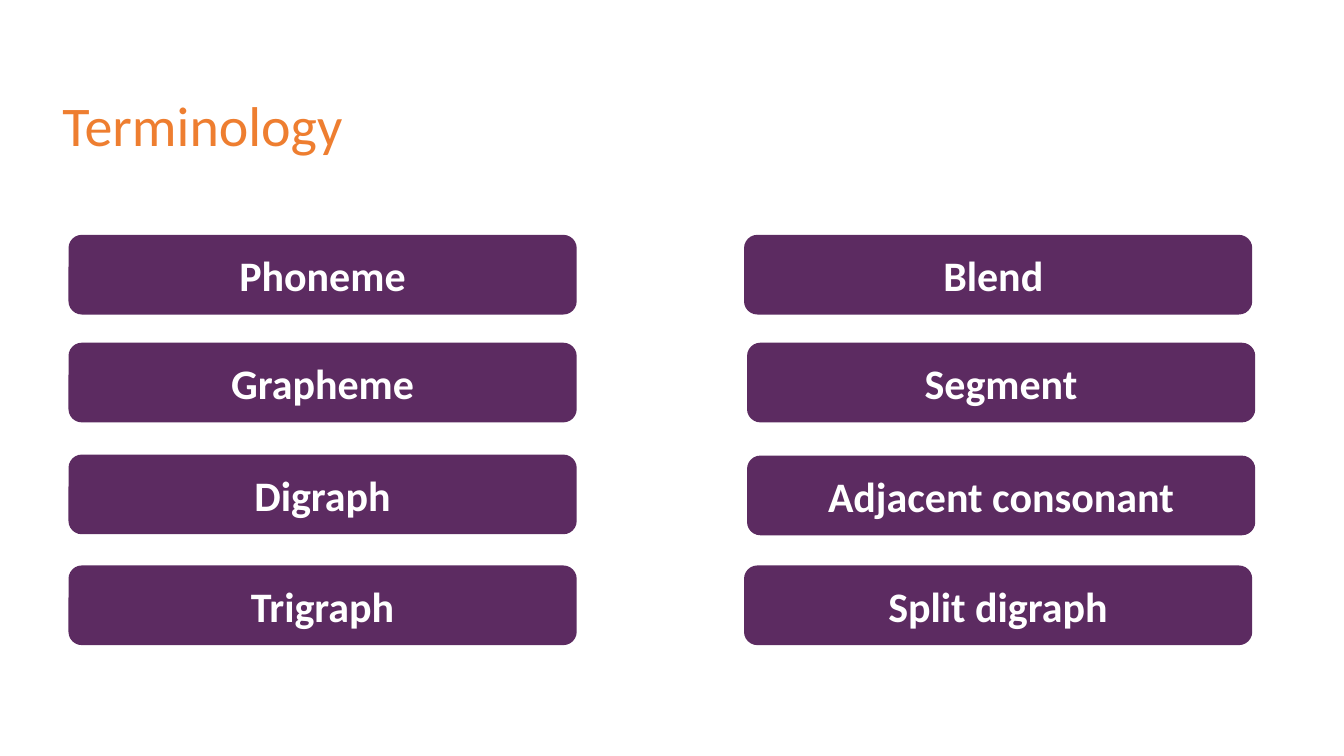
from dataclasses import dataclass

from pptx import Presentation
from pptx.dml.color import RGBColor
from pptx.enum.shapes import MSO_SHAPE
from pptx.enum.text import MSO_ANCHOR, PP_ALIGN
from pptx.util import Inches, Pt

ROUNDED = MSO_SHAPE.ROUNDED_RECTANGLE
LEFT, CENTER = PP_ALIGN.LEFT, PP_ALIGN.CENTER
BOTTOM, MIDDLE = MSO_ANCHOR.BOTTOM, MSO_ANCHOR.MIDDLE

FONT = "Calibri"
ORANGE, PURPLE, WHITE = "EE7E30", "5C2B61", "FFFFFF"
TERM_WIDTH, TERM_HEIGHT = 5.04, 0.79
LEFT_COLUMN, RIGHT_COLUMN, RIGHT_INSET = 0.68, 7.38, 7.41
ROWS = (2.33, 3.4, 4.51, 5.61)


@dataclass
class Term:
    text: str
    left: float
    top: float


TERMS = [
    Term(text, LEFT_COLUMN, top)
    for text, top in zip(("Phoneme", "Grapheme", "Digraph", "Trigraph"), ROWS)
] + [
    Term("Blend ", RIGHT_COLUMN, ROWS[0]),
    Term("Segment", RIGHT_INSET, ROWS[1]),
    Term("Adjacent consonant", RIGHT_INSET, 4.52),
    Term("Split digraph", RIGHT_COLUMN, ROWS[3]),
]


def color(value: str) -> RGBColor:
    return RGBColor.from_string(value)


def write_text(shape, text: str, *, size: float, font_color: str,
               bold: bool = False, align=LEFT, anchor=MIDDLE,
               line_spacing: float = 1.0) -> None:
    frame = shape.text_frame
    frame.word_wrap = True
    frame.vertical_anchor = anchor
    paragraph = frame.paragraphs[0]
    paragraph.alignment = align
    paragraph.line_spacing = line_spacing
    run = paragraph.add_run()
    run.text = text
    run.font.name = FONT
    run.font.size = Pt(size)
    run.font.bold = bold
    run.font.color.rgb = color(font_color)


def add_title(slide, text: str) -> None:
    title = slide.shapes.add_textbox(
        Inches(0.52), Inches(0.36), Inches(10.71), Inches(1.26))
    write_text(title, text, size=40, font_color=ORANGE, anchor=BOTTOM,
               line_spacing=0.9)


def add_term(slide, term: Term) -> None:
    shape = slide.shapes.add_shape(
        ROUNDED, Inches(term.left), Inches(term.top),
        Inches(TERM_WIDTH), Inches(TERM_HEIGHT))
    shape.shadow.inherit = False
    shape.fill.solid()
    shape.fill.fore_color.rgb = color(PURPLE)
    shape.line.fill.background()
    write_text(shape, term.text, size=30, font_color=WHITE, bold=True,
               align=CENTER)


def main() -> None:
    presentation = Presentation()
    presentation.slide_width = Inches(13.33)
    presentation.slide_height = Inches(7.5)
    slide = presentation.slides.add_slide(presentation.slide_layouts[6])

    # Heading
    add_title(slide, "Terminology")

    # Two columns of terms
    for term in TERMS:
        add_term(slide, term)

    presentation.save("out.pptx")


if __name__ == "__main__":
    main()
